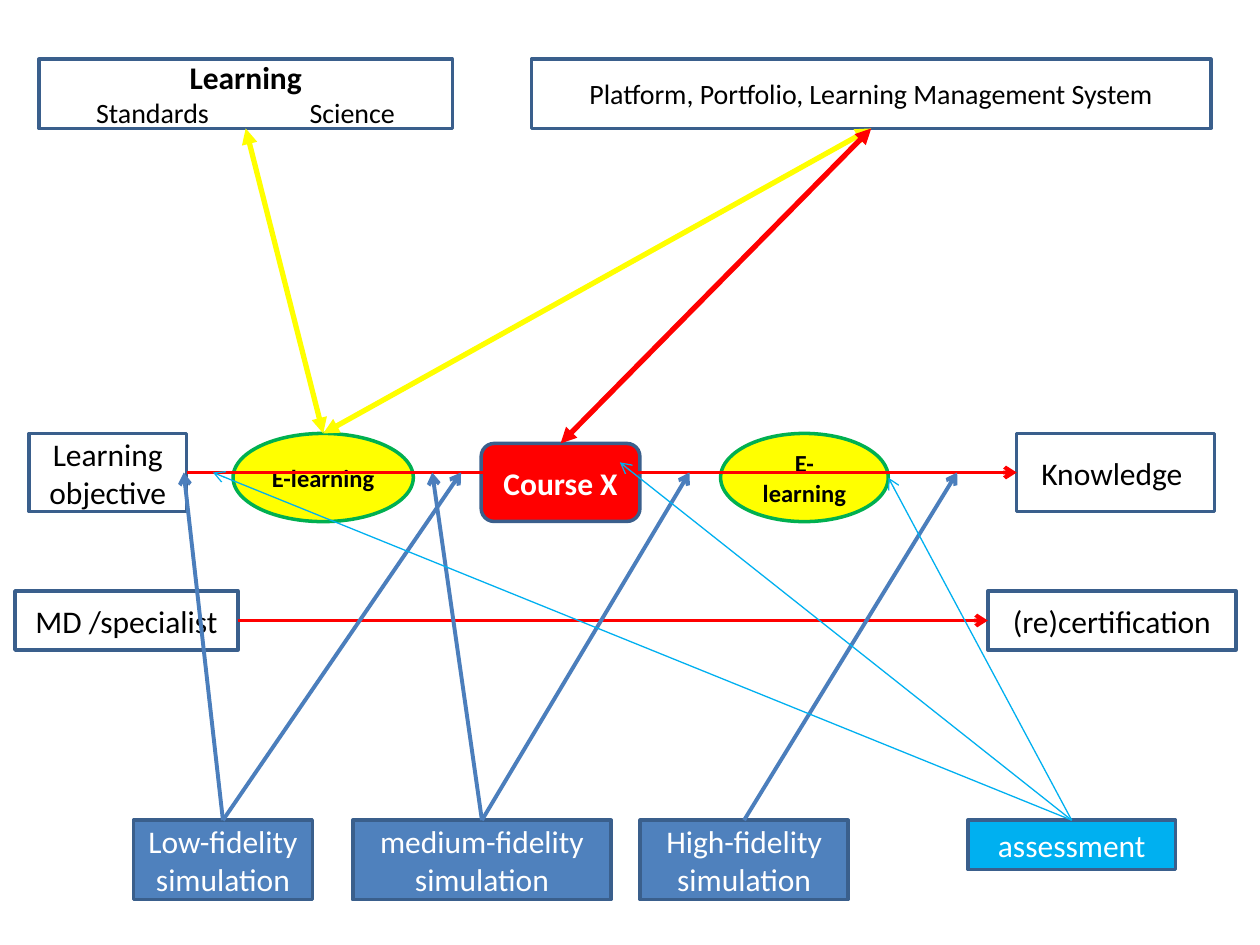
from lxml.etree import SubElement as Sub
from pptx import Presentation as Deck
from pptx.dml.color import RGBColor as RGB
from pptx.enum.shapes import MSO_CONNECTOR as Conn, MSO_SHAPE as Kind
from pptx.enum.text import MSO_ANCHOR as Anchor, PP_ALIGN as Align
from pptx.oxml.ns import qn
from pptx.util import Pt

WHITE, BLACK = RGB(255, 255, 255), RGB(0, 0, 0)
NAVY, BLUE = RGB(0x3A, 0x5F, 0x8C), RGB(0x4F, 0x81, 0xBD)
STEEL, CYAN = RGB(0x4B, 0x7E, 0xBC), RGB(0, 0xB0, 0xF0)
RED, YELLOW, GREEN = RGB(255, 0, 0), RGB(255, 255, 0), RGB(0, 0xB0, 0x50)

TOP, MID, LOW, BASE = 33.8, 247.7, 337.7, 468.7  # tops of the rows
FLOW = 270  # height of the course line
UP, LEFT, RIGHT = 0, 1, 3  # sides of a box
DOWN = 2


def style(par, size, ink, bold=False):
    for run in par.runs:
        font = run.font
        font.name, font.size, font.bold = "Calibri", Pt(size), bold
        font.color.rgb = ink


def add_box(slide, text, x, y, w, h, fill=WHITE, ink=BLACK, size=18,
            bold=False, kind=Kind.RECTANGLE, edge=NAVY):
    box = slide.shapes.add_shape(kind, Pt(x), Pt(y), Pt(w), Pt(h))
    box.shadow.inherit = False
    box.fill.solid()
    box.fill.fore_color.rgb = fill
    box.line.color.rgb = edge
    box.line.width = Pt(2)
    frame = box.text_frame
    frame.word_wrap = True
    frame.vertical_anchor = Anchor.MIDDLE
    frame.text = text
    for par in frame.paragraphs:
        par.alignment = Align.CENTER
        style(par, size, ink, bold)
    return box


def set_tabs(par, stops):
    par.alignment = Align.LEFT
    tabs = Sub(par._p.get_or_add_pPr(), qn("a:tabLst"))
    for stop in stops:
        Sub(tabs, qn("a:tab"), pos=str(Pt(stop)), algn="l")


def add_line(slide, start, end, ink, width, tip="arrow", both=False):
    """Each end is an (x, y) point or a (box, side) pair."""
    line = slide.shapes.add_connector(Conn.STRAIGHT, 0, 0, 0, 0)
    # Free ends go first, as joined ends keep their place
    if isinstance(end[0], (int, float)):
        line.end_x, line.end_y = Pt(end[0]), Pt(end[1])
    else:
        line.end_connect(*end)
    line.begin_connect(*start)
    line.line.color.rgb = ink
    line.line.width = Pt(width)
    pen = line.line._get_or_add_ln()
    if both:
        Sub(pen, qn("a:headEnd"), type=tip)
    Sub(pen, qn("a:tailEnd"), type=tip)
    Sub(line._element.spPr, qn("a:effectLst"))


def main():
    deck = Deck()
    deck.slide_width, deck.slide_height = Pt(720), Pt(540)
    slide = deck.slides.add_slide(deck.slide_layouts[6])

    # Top row: learning basis and platform
    learn = add_box(slide, "Learning\n\tStandards\tScience",
                    22.3, TOP, 236.2, 39.6)
    head, parts = learn.text_frame.paragraphs
    style(head, 18, BLACK, True)
    style(parts, 16, BLACK)
    set_tabs(parts, (25.5, 147.5))
    system = add_box(slide, "Platform, Portfolio, Learning Management System",
                     303.8, TOP, 388.1, 39.6, size=16)

    # Course row
    goal = add_box(slide, "Learning\nobjective", 16.6, MID, 90, 44.6)
    course = add_box(slide, "Course X", 275, 253.4, 90.7, 44.6, RED, WHITE,
                     bold=True, kind=Kind.ROUNDED_RECTANGLE)
    before, after = [
        add_box(slide, "E-learning", x, MID, w, 50.4, YELLOW, size=14,
                bold=True, kind=Kind.OVAL, edge=GREEN)
        for x, w in ((133.2, 103), (411.8, 95.8))]
    know = add_box(slide, "Knowledge ", 581, MID, 113, 44.6)

    # Career row
    doctor = add_box(slide, "MD /specialist", 8.6, LOW, 127.4, 33.8)
    proof = add_box(slide, "(re)certification", 564.5, LOW, 141.8, 33.8)

    # Bottom row: simulation levels and assessment
    basic, medium, high = [
        add_box(slide, f"{level}-fidelity simulation", x, BASE, w, 45.4,
                BLUE, WHITE)
        for level, x, w in (("Low", 76.3, 102.2), ("medium", 201.6, 147.6),
                            ("High", 365.8, 118.8))]
    test = add_box(slide, "assessment", 553, BASE, 118.8, 28.1, CYAN, WHITE)

    # Two-way links from the top row
    for box, goes, ink in ((learn, before, YELLOW), (system, before, YELLOW),
                           (system, course, RED)):
        add_line(slide, (box, DOWN), (goes, UP), ink, 3, "triangle", True)

    # Paths from left to right
    for box, goes in ((goal, know), (doctor, proof)):
        add_line(slide, (box, RIGHT), (goes, LEFT), RED, 2.25)

    # Simulations feed the course line
    for box, x in ((basic, 105), (basic, 263.5), (medium, 247),
                   (medium, 394), (high, 547)):
        add_line(slide, (box, UP), (x, FLOW), STEEL, 2.25)

    # Assessment points
    for spot in ((121.7, FLOW), (354.2, 264.2), (507.6, 272.9)):
        add_line(slide, (test, UP), spot, CYAN, 0.75)

    deck.save("out.pptx")


if __name__ == "__main__":
    main()
